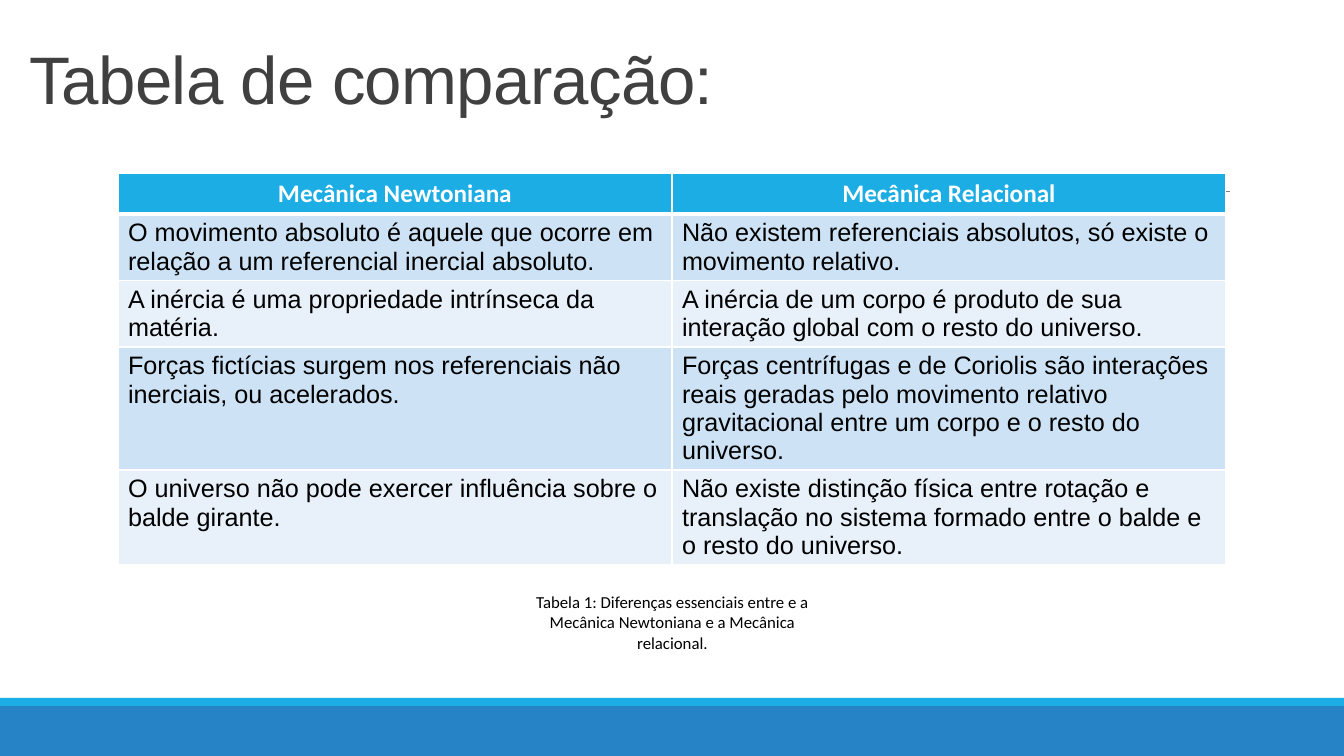
"""Builds a slide with a table comparing Newtonian and relational mechanics."""
from dataclasses import dataclass

from lxml import etree
from pptx import Presentation, util as u
from pptx.dml.color import RGBColor
from pptx.enum import shapes, text
from pptx.oxml import ns

TITLE = "Tabela de comparação:"
HEAD = ("Mecânica Newtoniana", "Mecânica Relacional")
BODY = [
    ("O movimento absoluto é aquele que ocorre em relação a um referencial inercial absoluto.",
     "Não existem referenciais absolutos, só existe o movimento relativo."),
    ("A inércia é uma propriedade intrínseca da matéria.",
     "A inércia de um corpo é produto de sua interação global com o resto do universo."),
    ("Forças fictícias surgem nos referenciais não inerciais, ou acelerados.",
     "Forças centrífugas e de Coriolis são interações reais geradas pelo movimento relativo "
     "gravitacional entre um corpo e o resto do universo."),
    ("O universo não pode exercer influência sobre o balde girante.",
     "Não existe distinção física entre rotação e translação no sistema formado entre "
     "o balde e o resto do universo."),
]
NOTE = "Tabela 1: Diferenças essenciais entre e a Mecânica Newtoniana e a Mecânica relacional."
WIDE, HIGH = 1344, 756
ROWS = (41, 66, 66, 123, 94)
COLS = (554, 554)


@dataclass(frozen=True)
class Theme:
    """Colours, fonts and type sizes."""
    base: str = "2683C6"
    head: str = "1CADE4"
    bands: tuple = ("CDE3F5", "E8F1FA")
    rule: str = "808080"
    title: str = "404040"
    ink: str = "000000"
    white: str = "FFFFFF"
    sans: str = "Arial"
    label: str = "Calibri"
    big: int = 48
    mid: int = 18
    small: int = 12


T = Theme()


def px(*nums):
    """Turns px into EMU."""
    return [round(n * 914400 / 100.8) for n in nums]


def paint(fill, tone):
    """Fills with one colour."""
    fill.solid()
    fill.fore_color.rgb = RGBColor.from_string(tone)


def write(frame, words, face, size, tone, bold=False, align=text.PP_ALIGN.LEFT):
    """Adds one run to the first paragraph and returns it."""
    para = frame.paragraphs[0]
    para.alignment = align
    run = para.add_run()
    run.text = words
    run.font.name, run.font.size, run.font.bold = face, u.Pt(size), bold
    run.font.color.rgb = RGBColor.from_string(tone)
    return run


def edge(cell, low):
    """Draws white cell borders, the bottom one low points wide."""
    props = cell._tc.get_or_add_tcPr()
    for spot, (side, size) in enumerate((("L", 1), ("R", 1), ("T", 1), ("B", low))):
        line = etree.Element(ns.qn(f"a:ln{side}"), w=str(u.Pt(size)))
        fill = etree.SubElement(line, ns.qn("a:solidFill"))
        etree.SubElement(fill, ns.qn("a:srgbClr"), val=T.white)
        props.insert(spot, line)


def add_band(slide, top, high, tone):
    """Adds a full-width band."""
    band = slide.shapes.add_shape(shapes.MSO_SHAPE.RECTANGLE, *px(0, top, WIDE, high))
    band.shadow.inherit = False
    paint(band.fill, tone)
    band.line.fill.background()


def add_rule(slide):
    """Adds the thin rule behind the table."""
    rule = slide.shapes.add_connector(shapes.MSO_CONNECTOR.STRAIGHT, *px(132, 191, 1230, 191))
    rule.line.width = u.Pt(0.5)
    rule.line.color.rgb = RGBColor.from_string(T.rule)
    etree.SubElement(rule._element.spPr, ns.qn("a:effectLst"))


def set_title(slide):
    """Places and fills the title."""
    title = slide.shapes.title
    title.left, title.top, title.width, title.height = px(19, 43, 1109, 80)
    frame = title.text_frame
    frame.auto_size = text.MSO_AUTO_SIZE.NONE
    frame.vertical_anchor = text.MSO_ANCHOR.BOTTOM
    run = write(frame, TITLE, T.sans, T.big, T.title)
    run.font._element.set("spc", "-50")
    frame.paragraphs[0].line_spacing = 0.85


def add_grid(slide):
    """Adds the comparison table."""
    cells = [HEAD, *BODY]
    table = slide.shapes.add_table(
        len(cells), len(HEAD), *px(118, 173, sum(COLS), sum(ROWS))).table
    for col, wide in zip(table.columns, px(*COLS)):
        col.width = wide
    for r, (row, high) in enumerate(zip(table.rows, px(*ROWS))):
        row.height = high
        for cell, words in zip(row.cells, cells[r]):
            if r == 0:
                paint(cell.fill, T.head)
                write(cell.text_frame, words, T.label, T.mid, T.white, True,
                      text.PP_ALIGN.CENTER)
            else:
                paint(cell.fill, T.bands[(r - 1) % 2])
                write(cell.text_frame, words, T.sans, T.mid, T.ink)
            edge(cell, 1 if r else 3)


def add_note(slide):
    """Adds the caption under the table."""
    frame = slide.shapes.add_textbox(*px(506, 587, 333, 72)).text_frame
    frame.word_wrap = True
    frame.auto_size = text.MSO_AUTO_SIZE.SHAPE_TO_FIT_TEXT
    write(frame, NOTE, T.label, T.small, T.ink, align=text.PP_ALIGN.CENTER)


def main():
    """Builds and saves the slide."""
    deck = Presentation()
    deck.slide_width, deck.slide_height = px(WIDE, HIGH)
    slide = deck.slides.add_slide(deck.slide_layouts.get_by_name("Title Only"))
    add_band(slide, 706, 50, T.base)
    add_band(slide, 698, 8, T.head)
    add_rule(slide)
    set_title(slide)
    add_grid(slide)
    add_note(slide)
    deck.save("out.pptx")


if __name__ == "__main__":
    main()
